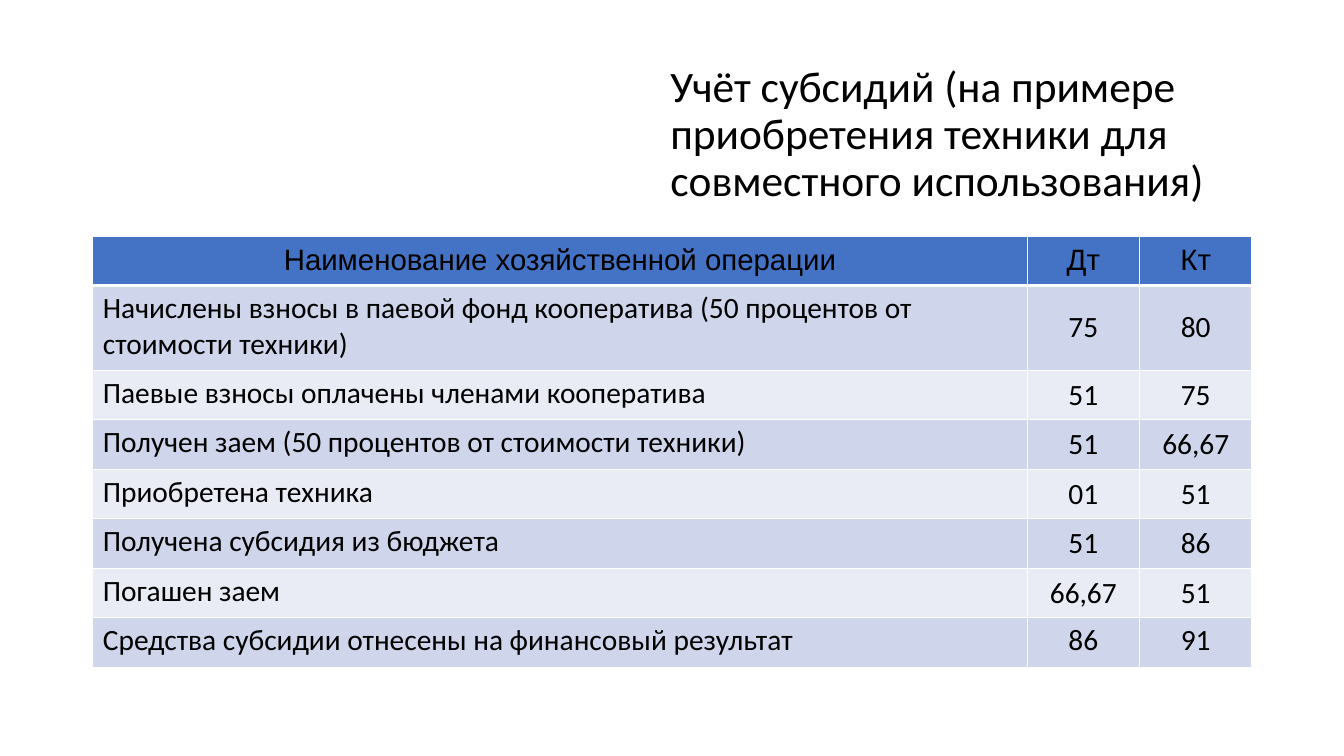
from lxml.etree import SubElement
from pptx import Presentation
from pptx.dml.color import RGBColor
from pptx.enum.text import MSO_ANCHOR, PP_ALIGN
from pptx.oxml.ns import qn
from pptx.util import Pt

BLACK, WHITE = "000000", "FFFFFF"
HEADER_FILL = "4472C4"
BAND_FILLS = ("CFD5EA", "E9EBF5")

TITLE = "Учёт субсидий (на примере приобретения техники для совместного использования)"
HEADER = ("Наименование хозяйственной операции", "Дт", "Кт")
OPERATIONS = [
    ("Начислены взносы в паевой фонд кооператива (50 процентов от стоимости техники)", "75", "80"),
    ("Паевые взносы оплачены членами кооператива", "51", "75"),
    ("Получен заем (50 процентов от стоимости техники)", "51", "66,67"),
    ("Приобретена техника", "01", "51"),
    ("Получена субсидия из бюджета", "51", "86"),
    ("Погашен заем", "66,67", "51"),
    ("Средства субсидии отнесены на финансовый результат", "86", "91"),
]
ROW_HEIGHT, TALL_ROW_HEIGHT = 35.4, 60.5
ACCOUNT_WIDTH = 80.3


def rgb(value):
    return RGBColor.from_string(value)


def write_text(tf, text, size, font, align):
    p = tf.paragraphs[0]
    p.alignment = align
    r = p.add_run()
    r.text = text
    style = {"name": font, "size": Pt(size), "bold": False}
    for name, value in style.items():
        setattr(r.font, name, value)
    r.font.color.rgb = rgb(BLACK)
    return p


def set_borders(cell, bottom_width):
    tcPr = cell._tc.get_or_add_tcPr()
    widths = {"a:lnL": 1, "a:lnR": 1, "a:lnT": 1, "a:lnB": bottom_width}
    for tag, width in widths.items():
        ln = SubElement(tcPr, qn(tag), w=str(Pt(width)))
        fill = SubElement(ln, qn("a:solidFill"))
        SubElement(fill, qn("a:srgbClr"), val=WHITE)


def add_title(slide, left, top, width, height):
    title = slide.shapes.title
    box = {"left": left, "top": top, "width": width, "height": height}
    for name, value in box.items():
        setattr(title, name, Pt(value))
    tf = title.text_frame
    tf.word_wrap = True
    tf.vertical_anchor = MSO_ANCHOR.MIDDLE
    p = write_text(tf, TITLE, 31, "Calibri", PP_ALIGN.LEFT)
    p.line_spacing = 0.9


def add_operations_table(slide, left, top, width):
    rows = [HEADER, *OPERATIONS]
    heights = [ROW_HEIGHT] * len(rows)
    heights[1] = TALL_ROW_HEIGHT
    table = slide.shapes.add_table(len(rows), len(HEADER), Pt(left), Pt(top),
                                   Pt(width), Pt(sum(heights))).table
    widths = (width - 2 * ACCOUNT_WIDTH, ACCOUNT_WIDTH, ACCOUNT_WIDTH)
    for column, column_width in zip(table.columns, widths):
        column.width = Pt(column_width)

    for i, texts in enumerate(rows):
        table.rows[i].height = Pt(heights[i])
        is_header, is_last = i == 0, i == len(rows) - 1
        for j, text in enumerate(texts):
            cell = table.cell(i, j)
            is_name = j == 0 and not is_header
            at_top = is_name or is_last
            cell.vertical_anchor = MSO_ANCHOR.TOP if at_top else MSO_ANCHOR.MIDDLE
            set_borders(cell, 3 if is_header else 1)
            cell.fill.solid()
            cell.fill.fore_color.rgb = rgb(HEADER_FILL if is_header else BAND_FILLS[(i - 1) % 2])
            write_text(cell.text_frame, text, 21, "Arial" if is_header else "Calibri",
                       PP_ALIGN.LEFT if is_name else PP_ALIGN.CENTER)


def main():
    prs = Presentation()
    prs.slide_width, prs.slide_height = Pt(960), Pt(540)
    slide = prs.slides.add_slide(prs.slide_layouts[5])
    add_title(slide, 471.6, 22.3, 421.9, 149)
    add_operations_table(slide, 66.3, 168.6, 828)
    prs.save("out.pptx")


if __name__ == "__main__":
    main()
